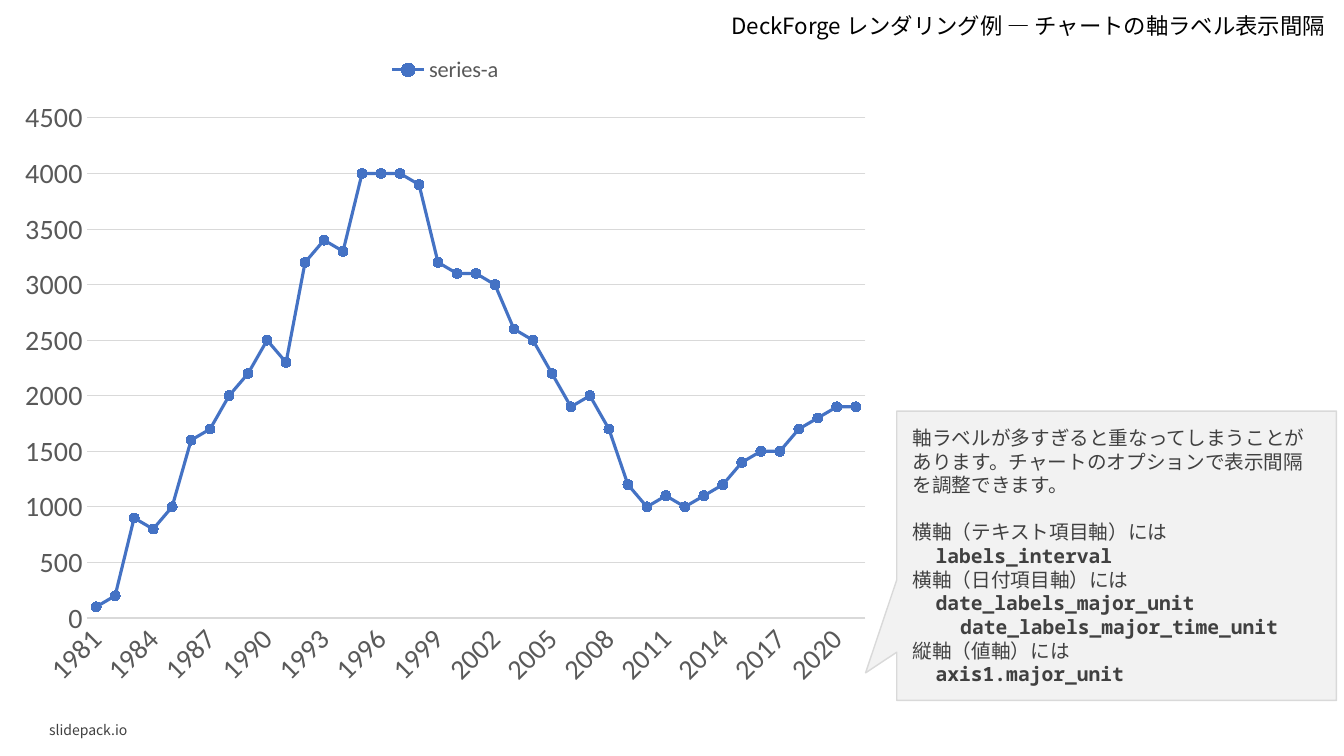
from typing import NamedTuple

from lxml import etree
from pptx import Presentation
from pptx import util as u
from pptx.chart import data as chart_data
from pptx.dml import color
from pptx.enum import chart as ch
from pptx.enum import shapes, text
from pptx.oxml import ns

CJK, MONO, LATIN = "Noto Sans CJK JP", "Noto Sans Mono", "Calibri"
GREY, PALE, BLUE = "595959", "D9D9D9", "4472C4"
INK, PANEL, BLACK = "404040", "F2F2F2", "000000"

FIRST_YEAR = 1981
LABEL_INTERVAL = 3
SERIES_A = [
    100, 200, 900, 800, 1000, 1600, 1700, 2000, 2200, 2500, 2300,
    3200, 3400, 3300, 4000, 4000, 4000, 3900, 3200, 3100, 3100,
    3000, 2600, 2500, 2200, 1900, 2000, 1700, 1200, 1000, 1100,
    1000, 1100, 1200, 1400, 1500, 1500, 1700, 1800, 1900, 1900,
]


class Box(NamedTuple):
    """Left, top, width and height in centimetres."""
    left: float
    top: float
    width: float
    height: float

    def lengths(self) -> list[u.Length]:
        return [u.Cm(side) for side in self]


class NoteLine(NamedTuple):
    words: str
    indent: float = 0  # cm; indented lines are option names
    gap: float = 0  # points before the line


class Label(NamedTuple):
    words: str
    box: Box
    size: float
    ink: str
    align: text.PP_ALIGN
    wrap: bool


LABELS = [
    Label("slidepack.io", Box(0.99, 18.08, 7.39, 0.64), 10, INK,
          text.PP_ALIGN.LEFT, True),
    Label("DeckForge レンダリング例 ― チャートの軸ラベル表示間隔",
          Box(17.88, 0.18, 15.77, 0.94), 16, BLACK, text.PP_ALIGN.RIGHT, False),
]

NOTE_PITCH = 16.9
NOTE = [
    NoteLine("軸ラベルが多すぎると重なってしまうことがあります。"
             "チャートのオプションで表示間隔を調整できます。"),
    NoteLine("横軸（テキスト項目軸）には", gap=NOTE_PITCH),
    NoteLine("labels_interval", 0.58),
    NoteLine("横軸（日付項目軸）には"),
    NoteLine("date_labels_major_unit", 0.58),
    NoteLine("date_labels_major_time_unit", 1.2),
    NoteLine("縦軸（値軸）には"),
    NoteLine("axis1.major_unit", 0.58),
]


def rgb(code: str) -> color.RGBColor:
    return color.RGBColor.from_string(code)


def style_font(font, size: float, ink: str, face: str) -> None:
    font.size = u.Pt(size)
    font.color.rgb = rgb(ink)
    font.name = face


def add_run(paragraph, words: str, size: float, ink: str, face: str,
            bold: bool = False) -> None:
    run = paragraph.add_run()
    run.text = words
    style_font(run.font, size, ink, face)
    run.font.bold = bold
    east_asian = etree.SubElement(run.font._element, ns.qn("a:ea"))
    east_asian.set("typeface", face)


def add_label(slide, label: Label) -> None:
    frame = slide.shapes.add_textbox(*label.box.lengths()).text_frame
    frame.word_wrap = label.wrap
    frame.vertical_anchor = text.MSO_ANCHOR.MIDDLE
    paragraph = frame.paragraphs[0]
    paragraph.alignment = label.align
    add_run(paragraph, label.words, label.size, label.ink, CJK)


def fix_plot_area(chart, **fractions: float) -> None:
    """Pin the inner plot area to fractions of the chart's size."""
    plot_area = chart._chartSpace.chart.plotArea
    for old in plot_area.findall(ns.qn("c:layout")):
        plot_area.remove(old)
    layout = etree.Element(ns.qn("c:layout"))
    plot_area.insert(0, layout)
    manual = etree.SubElement(layout, ns.qn("c:manualLayout"))
    settings = {"layoutTarget": "inner", "xMode": "edge", "yMode": "edge",
                **fractions}
    for tag, value in settings.items():
        etree.SubElement(manual, ns.qn(f"c:{tag}")).set("val", str(value))


def style_axes(chart) -> None:
    years, values = chart.category_axis, chart.value_axis
    for axis in (years, values):
        axis.major_tick_mark = axis.minor_tick_mark = ch.XL_TICK_MARK.NONE
        style_font(axis.tick_labels.font, 20, GREY, LATIN)
    values.minimum_scale, values.maximum_scale = 0, 4500
    values.major_unit = 500
    values.has_major_gridlines = True
    values.format.line.fill.background()
    for line in (years.format.line, values.major_gridlines.format.line):
        line.color.rgb = rgb(PALE)
        line.width = u.Pt(0.75)

    axis_xml = years._element
    axis_xml.find(ns.qn("c:txPr")).find(ns.qn("a:bodyPr")).set("rot", "-2700000")
    skip = etree.Element(ns.qn("c:tickLblSkip"))
    skip.set("val", str(LABEL_INTERVAL))
    axis_xml.find(ns.qn("c:noMultiLvlLbl")).addprevious(skip)


def add_line_chart(slide, box: Box) -> None:
    table = chart_data.CategoryChartData()
    table.categories = [str(FIRST_YEAR + i) for i in range(len(SERIES_A))]
    table.add_series("series-a", SERIES_A)
    chart = slide.shapes.add_chart(
        ch.XL_CHART_TYPE.LINE_MARKERS, *box.lengths(), table).chart
    style_font(chart.font, 10, BLACK, LATIN)
    chart.has_title = False
    chart.has_legend = True
    chart.legend.position = ch.XL_LEGEND_POSITION.TOP
    chart.legend.include_in_layout = False
    style_font(chart.legend.font, 16, GREY, LATIN)
    style_axes(chart)
    fix_plot_area(chart, x=0.09, y=0.112, w=0.89, h=0.762)

    plot = chart.plots[0]
    plot.vary_by_categories = False
    series = plot.series[0]
    series.smooth = False
    series.format.line.color.rgb = rgb(BLUE)
    series.format.line.width = u.Pt(2.25)
    series.marker.style = ch.XL_MARKER_STYLE.CIRCLE
    series.marker.size = 7
    series.marker.format.fill.solid()
    series.marker.format.fill.fore_color.rgb = rgb(BLUE)
    series.marker.format.line.color.rgb = rgb(BLUE)


def add_callout(slide, box: Box) -> None:
    callout = slide.shapes.add_shape(
        shapes.MSO_SHAPE.RECTANGULAR_CALLOUT, *box.lengths())
    callout.adjustments[0], callout.adjustments[1] = -0.571, 0.405
    callout.shadow.inherit = False
    callout.fill.solid()
    callout.fill.fore_color.rgb = rgb(PANEL)
    callout.line.color.rgb = rgb(PALE)
    callout.line.width = u.Pt(1)

    frame = callout.text_frame
    frame.word_wrap = True
    frame.vertical_anchor = text.MSO_ANCHOR.MIDDLE
    frame.margin_left = frame.margin_right = u.Cm(0.4)
    frame.margin_top = frame.margin_bottom = u.Cm(0.4)
    for i, line in enumerate(NOTE):
        paragraph = frame.add_paragraph() if i else frame.paragraphs[0]
        paragraph.alignment = text.PP_ALIGN.LEFT
        paragraph.line_spacing = u.Pt(NOTE_PITCH)
        if line.gap:
            paragraph.space_before = u.Pt(line.gap)
        is_option = line.indent > 0
        if is_option:
            paragraph._p.get_or_add_pPr().set("marL", str(u.Cm(line.indent)))
        add_run(paragraph, line.words, 14, INK,
                MONO if is_option else CJK, is_option)


def main() -> None:
    deck = Presentation()
    deck.slide_width, deck.slide_height = u.Cm(33.87), u.Cm(19.05)
    slide = deck.slides.add_slide(deck.slide_layouts[6])
    for label in LABELS:
        add_label(slide, label)
    add_line_chart(slide, Box(0.2, 1.12, 22.05, 16.54))
    add_callout(slide, Box(22.6, 10.36, 11.08, 7.29))
    deck.save("out.pptx")


if __name__ == "__main__":
    main()
